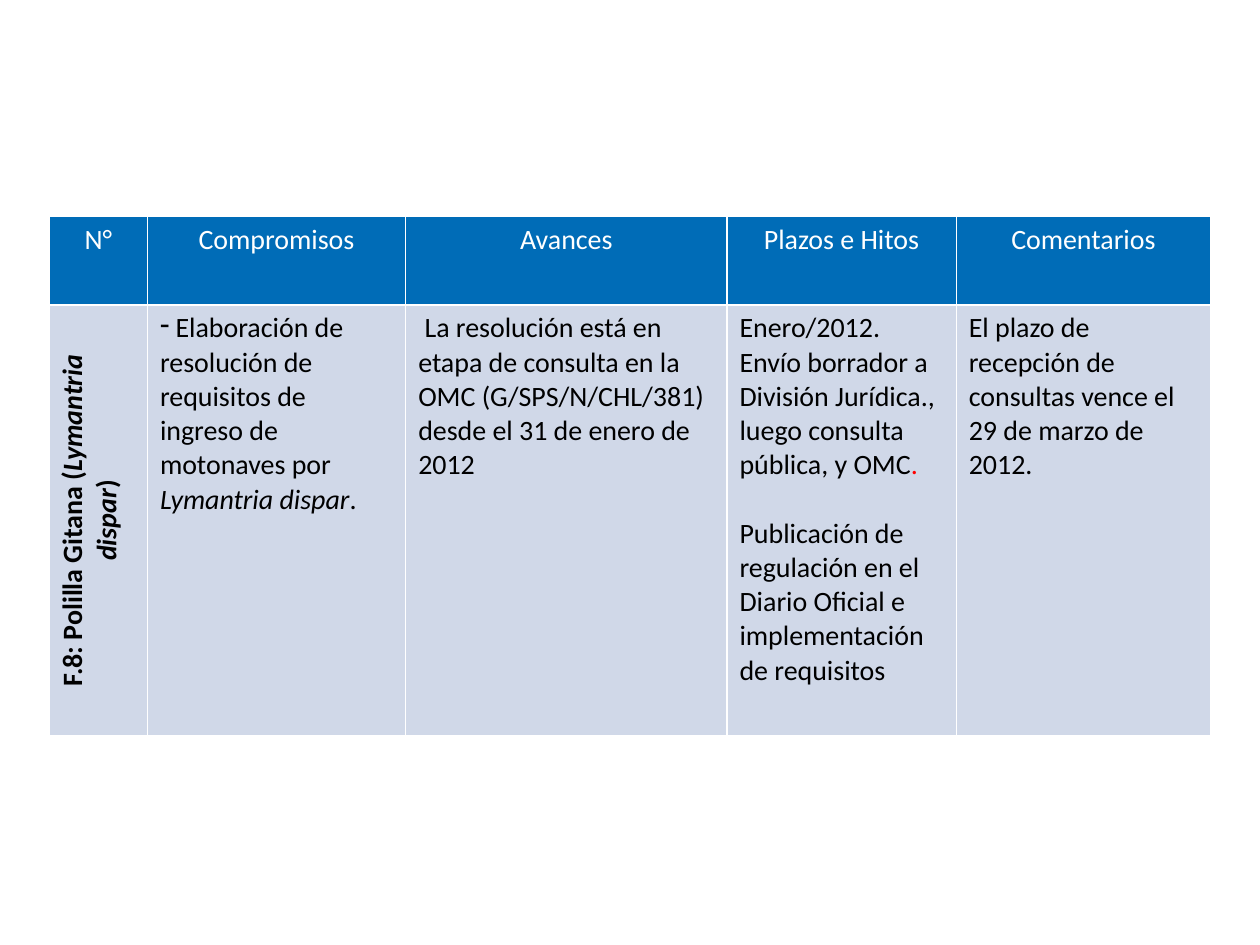
import dataclasses

import lxml.etree
import pptx
import pptx.dml.color
import pptx.enum.text
import pptx.oxml.ns
import pptx.util

WIDTH, HEIGHT = 10, 7.5
TABLE_LEFT, TABLE_TOP = 0.39, 1.72
COLUMN_WIDTHS = [0.78, 2.05, 2.55, 1.82, 2.02]
ROW_HEIGHTS = [0.7, 3.1]
HEADER_FILL, BODY_FILL = "006CB7", "D0D8E8"
WHITE, BLACK, RED = "FFFFFF", "000000", "FF0000"
CENTER = pptx.enum.text.PP_ALIGN.CENTER
LEFT = pptx.enum.text.PP_ALIGN.LEFT


@dataclasses.dataclass
class Span:
    text: str
    color: str = BLACK
    bold: bool = False
    italic: bool = False


@dataclasses.dataclass
class Para:
    spans: list[Span]
    align: pptx.enum.text.PP_ALIGN = LEFT
    bullet: str = ""
    space_before: float = 0


@dataclasses.dataclass
class CellContent:
    paras: list[Para]
    fill: str = BODY_FILL
    vertical: bool = False


def rgb(color: str) -> pptx.dml.color.RGBColor:
    return pptx.dml.color.RGBColor.from_string(color)


def add_child(parent, tag: str, **attributes: str):
    child = lxml.etree.SubElement(parent, pptx.oxml.ns.qn(tag))
    for name, value in attributes.items():
        child.set(name, value)
    return child


def draw_borders(cell, color: str, points: float) -> None:
    properties = cell._tc.get_or_add_tcPr()
    for side in ("a:lnL", "a:lnR", "a:lnT", "a:lnB"):
        line = add_child(properties, side, w=str(pptx.util.Pt(points)))
        add_child(add_child(line, "a:solidFill"), "a:srgbClr", val=color)


def write_paragraph(paragraph, para: Para) -> None:
    paragraph.alignment = para.align
    paragraph.space_before = pptx.util.Pt(para.space_before)
    if para.bullet:
        properties = paragraph._p.get_or_add_pPr()
        properties.set("marL", "0")
        properties.set("indent", "0")
        add_child(properties, "a:buChar", char=para.bullet)
    for span in para.spans:
        run = paragraph.add_run()
        run.text = span.text
        run.font.name = "Calibri"
        run.font.size = pptx.util.Pt(16)
        run.font.bold = span.bold
        run.font.italic = span.italic
        run.font.color.rgb = rgb(span.color)


def fill_cell(cell, content: CellContent) -> None:
    draw_borders(cell, WHITE, 1)
    cell.fill.solid()
    cell.fill.fore_color.rgb = rgb(content.fill)
    if content.vertical:
        cell._tc.get_or_add_tcPr().set("vert", "vert270")
    frame = cell.text_frame
    for index, para in enumerate(content.paras):
        paragraph = frame.add_paragraph() if index else frame.paragraphs[0]
        write_paragraph(paragraph, para)


def header(text: str) -> CellContent:
    return CellContent([Para([Span(text, WHITE)], CENTER)], HEADER_FILL)


HEADERS = ["N°", "Compromisos", "Avances", "Plazos e Hitos", "Comentarios"]
BODY = [
    CellContent([Para([
        Span("F.8: Polilla Gitana (", bold=True),
        Span("Lymantria dispar", bold=True, italic=True),
        Span(")", bold=True),
    ], CENTER)], vertical=True),
    CellContent([Para([
        Span(" Elaboración de resolución de requisitos de ingreso de motonaves por "),
        Span("Lymantria dispar", italic=True),
        Span("."),
    ], bullet="-")]),
    CellContent([Para([Span(
        " La resolución está en etapa de consulta en la OMC "
        "(G/SPS/N/CHL/381) desde el 31 de enero de 2012")])]),
    CellContent([
        Para([
            Span("Enero/2012. Envío borrador a División Jurídica., "
                 "luego consulta pública, y OMC"),
            Span(".", RED),
        ]),
        Para([Span("Publicación de regulación en el Diario Oficial "
                   "e implementación de requisitos")], space_before=19.5),
    ]),
    CellContent([Para([Span(
        "El plazo de recepción de consultas vence el 29 de marzo de 2012.")])]),
]


def main() -> None:
    deck = pptx.Presentation()
    deck.slide_width = pptx.util.Inches(WIDTH)
    deck.slide_height = pptx.util.Inches(HEIGHT)
    page = deck.slides.add_slide(deck.slide_layouts[6])
    rows = [[header(text) for text in HEADERS], BODY]
    table = page.shapes.add_table(
        len(rows), len(HEADERS),
        pptx.util.Inches(TABLE_LEFT), pptx.util.Inches(TABLE_TOP),
        pptx.util.Inches(sum(COLUMN_WIDTHS)), pptx.util.Inches(sum(ROW_HEIGHTS)),
    ).table
    for column, width in zip(table.columns, COLUMN_WIDTHS):
        column.width = pptx.util.Inches(width)
    for row, height, contents in zip(table.rows, ROW_HEIGHTS, rows):
        row.height = pptx.util.Inches(height)
        for cell, content in zip(row.cells, contents):
            fill_cell(cell, content)
    deck.save("out.pptx")


if __name__ == "__main__":
    main()
